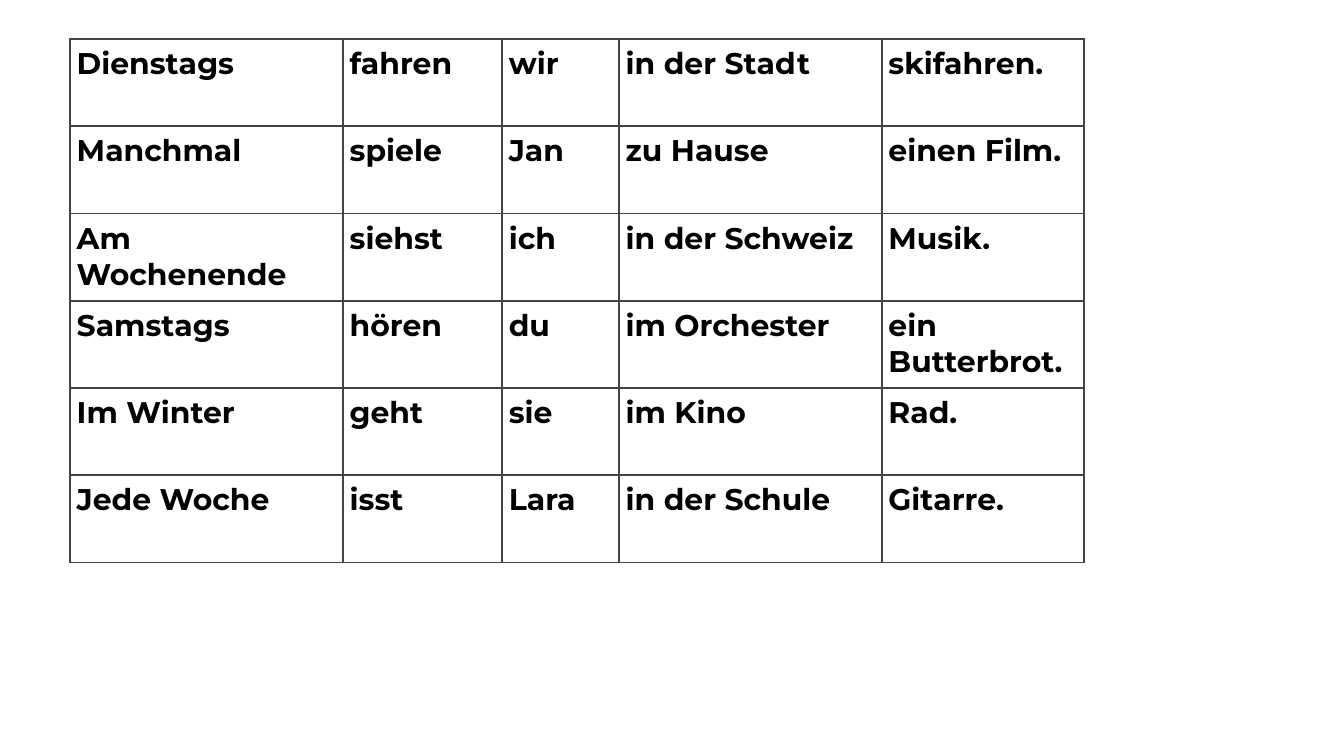
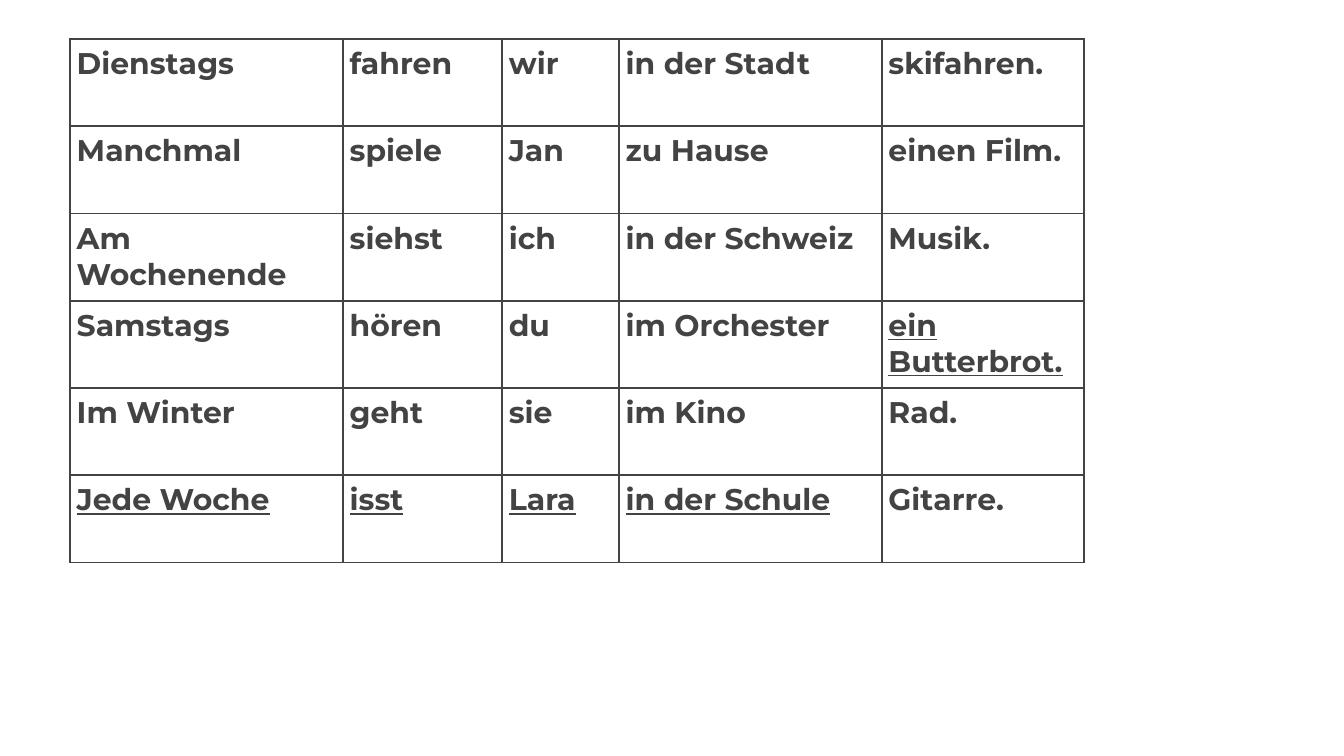
from dataclasses import dataclass

from lxml import etree
from pptx import Presentation
from pptx.dml.color import RGBColor
from pptx.oxml.ns import qn
from pptx.util import Pt

BLANK = 6
SIDES = ("a:lnL", "a:lnR", "a:lnT", "a:lnB")
MARGINS = ("margin_left", "margin_top", "margin_right", "margin_bottom")


@dataclass(frozen=True)
class Theme:
    black: str = "000000"
    gray: str = "434343"
    white: str = "FFFFFF"
    font: str = "Montserrat"
    size: float = 32
    border: float = 2.25
    inset: float = 7.2


# Sentence parts: time, verb, subject, place, ending
SENTENCES = (
    ("Dienstags", "fahren", "wir", "in der Stadt", "skifahren."),
    ("Manchmal", "spiele", "Jan", "zu Hause", "einen Film."),
    ("Am Wochenende", "siehst", "ich", "in der Schweiz", "Musik."),
    ("Samstags", "hören", "du", "im Orchester", "ein Butterbrot."),
    ("Im Winter", "geht", "sie", "im Kino", "Rad."),
    ("Jede Woche", "isst", "Lara", "in der Schule", "Gitarre."),
)
SOLUTION = {"Jede Woche", "isst", "Lara", "in der Schule", "ein Butterbrot."}

LEFT, TOP = 75, 41.75
COL_WIDTHS = (292.5, 170.5, 125.25, 281.5, 216.75)
ROW_HEIGHT = 93.5


class Deck:
    def __init__(self, theme):
        self.theme = theme
        self.prs = Presentation()
        self.prs.slide_width, self.prs.slide_height = Pt(1440), Pt(810)
        self.s = None

    def slide(self):
        self.s = self.prs.slides.add_slide(self.prs.slide_layouts[BLANK])
        fill = self.s.background.fill
        fill.solid()
        fill.fore_color.rgb = RGBColor.from_string(self.theme.white)

    def borders(self, cell):
        tcPr = cell._tc.get_or_add_tcPr()
        for side in SIDES:
            ln = etree.SubElement(tcPr, qn(side), w=str(Pt(self.theme.border)))
            fill = etree.SubElement(ln, qn("a:solidFill"))
            etree.SubElement(fill, qn("a:srgbClr"), val=self.theme.gray)

    def cell(self, cell, text, color, underline):
        # Borders come before the fill in the cell properties
        self.borders(cell)
        cell.fill.background()
        for margin in MARGINS:
            setattr(cell, margin, Pt(self.theme.inset))
        r = cell.text_frame.paragraphs[0].add_run()
        r.text = text
        style = {"name": self.theme.font, "size": Pt(self.theme.size),
                 "bold": True, "underline": underline}
        for key, value in style.items():
            setattr(r.font, key, value)
        r.font.color.rgb = RGBColor.from_string(color)

    def table(self, rows, color, underlined=()):
        frame = self.s.shapes.add_table(
            len(rows), len(COL_WIDTHS), Pt(LEFT), Pt(TOP),
            Pt(sum(COL_WIDTHS)), Pt(ROW_HEIGHT * len(rows)))
        tbl = frame.table
        tbl.first_row = tbl.horz_banding = False
        for col, width in zip(tbl.columns, COL_WIDTHS):
            col.width = Pt(width)
        for row, texts in zip(tbl.rows, rows):
            row.height = Pt(ROW_HEIGHT)
            for cell, text in zip(row.cells, texts):
                self.cell(cell, text, color, text in underlined)


def main():
    theme = Theme()
    deck = Deck(theme)

    # Exercise
    deck.slide()
    deck.table(SENTENCES, theme.black)

    # First sentence marked
    deck.slide()
    deck.table(SENTENCES, theme.gray, SOLUTION)

    deck.prs.save("out.pptx")


if __name__ == "__main__":
    main()
